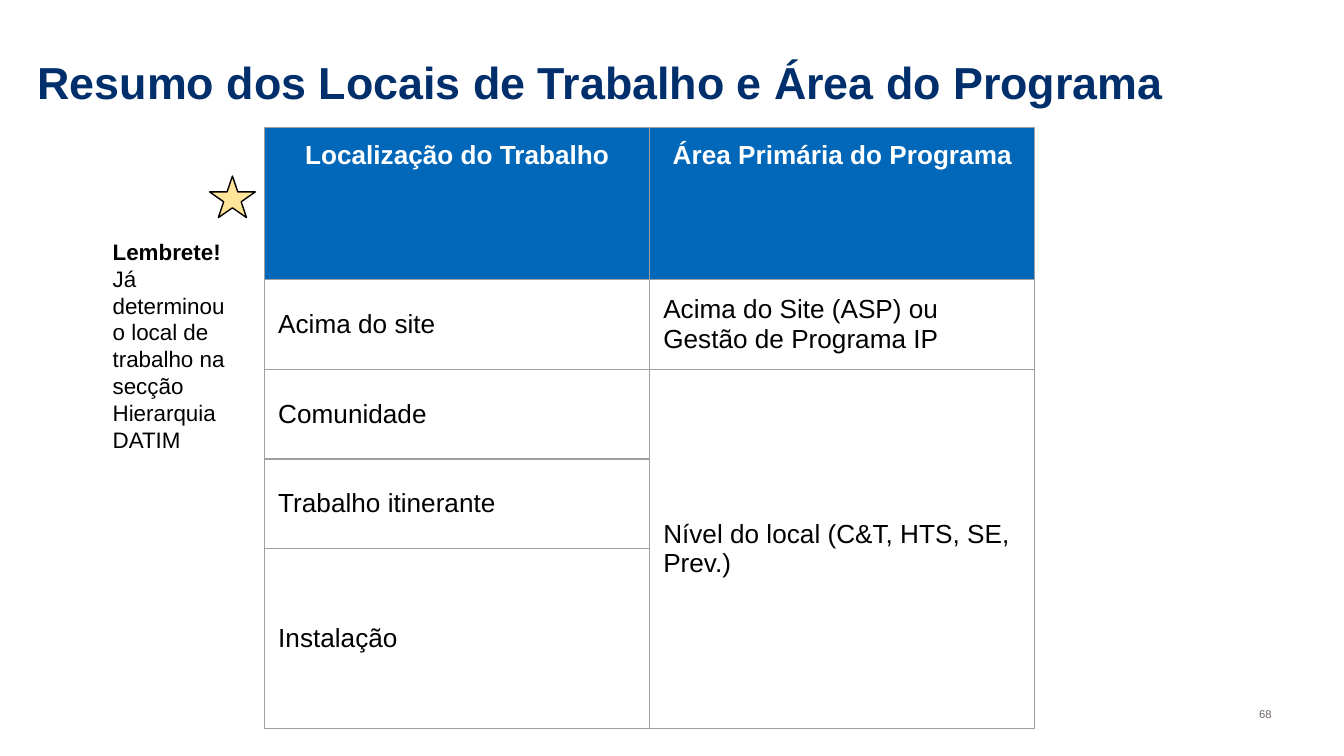
from lxml import etree
from pptx import Presentation
from pptx.dml.color import RGBColor
from pptx.enum.shapes import MSO_SHAPE as Shape
from pptx.enum.text import MSO_ANCHOR as Anchor, MSO_AUTO_SIZE as AutoSize, PP_ALIGN as Align
from pptx.oxml.ns import qn
from pptx.util import Inches, Pt

NAVY, BLUE, GREY, BORDER = "002F6C", "0067B9", "6C6463", "9E9E9E"
BLACK, WHITE, YELLOW = "000000", "FFFFFF", "FFE599"

HEADERS = ["Localização do Trabalho", "Área Primária do Programa"]
LOCATIONS = ["Acima do site", "Comunidade", "Trabalho itinerante", "Instalação"]
ABOVE_SITE = "Acima do Site (ASP) ou Gestão de Programa IP"
SITE_LEVEL = "Nível do local (C&T, HTS, SE, Prev.)"


def color(value):
    return RGBColor.from_string(value)


def add_run(para, text, size, fill, bold=False):
    span = para.add_run()
    span.text = text
    span.font.name = "Arial"
    span.font.size = Pt(size)
    span.font.bold = bold
    span.font.color.rgb = color(fill)


def set_frame(frame, anchor, vertical=0.1):
    frame.word_wrap = True
    frame.auto_size = AutoSize.NONE
    frame.vertical_anchor = anchor
    frame.margin_left = frame.margin_right = Inches(0.1)
    frame.margin_top = frame.margin_bottom = Inches(vertical)


def add_title(page, left, top, width, height):
    title = page.shapes.title
    title.left, title.top = Inches(left), Inches(top)
    title.width, title.height = Inches(width), Inches(height)
    set_frame(title.text_frame, Anchor.BOTTOM)
    para = title.text_frame.paragraphs[0]
    para.alignment = Align.LEFT
    add_run(para, "Resumo dos Locais de Trabalho e Área do Programa", 24, NAVY, True)


def set_borders(cell):
    properties = cell._tc.get_or_add_tcPr()
    for index, side in enumerate(("lnL", "lnR", "lnT", "lnB")):
        line = etree.Element(qn(f"a:{side}"), w=str(Pt(0.75)))
        fill = etree.SubElement(line, qn("a:solidFill"))
        etree.SubElement(fill, qn("a:srgbClr"), val=BORDER)
        properties.insert(index, line)


def fill_cell(cell, text, header=False):
    cell.vertical_anchor = Anchor.TOP if header else Anchor.MIDDLE
    para = cell.text_frame.paragraphs[0]
    para.alignment = Align.CENTER if header else Align.LEFT
    add_run(para, text, 14, WHITE if header else BLACK, header)


def add_locations_table(page, left, top, width, height):
    header_height = 1.13
    row_height = (height - header_height) / 5
    table = page.shapes.add_table(
        6, 2, Inches(left), Inches(top), Inches(width), Inches(height)).table
    table.first_row = table.horz_banding = False
    for row_index, row in enumerate(table.rows):
        row.height = Inches(row_height if row_index else header_height)
        for cell in row.cells:
            cell.margin_left = cell.margin_right = Inches(0.1)
            cell.margin_top = cell.margin_bottom = Inches(0.1)
            if row_index:
                cell.fill.background()
            else:
                cell.fill.solid()
                cell.fill.fore_color.rgb = color(BLUE)
            set_borders(cell)

    table.cell(2, 1).merge(table.cell(5, 1))
    table.cell(4, 0).merge(table.cell(5, 0))
    for column, text in enumerate(HEADERS):
        fill_cell(table.cell(0, column), text, header=True)
    for row_index, text in enumerate(LOCATIONS, start=1):
        fill_cell(table.cell(row_index, 0), text)
    fill_cell(table.cell(1, 1), ABOVE_SITE)
    fill_cell(table.cell(2, 1), SITE_LEVEL)


def add_reminder(page, left, top, width, height):
    """Star at the top right of the box, with the reminder text below it."""
    star_width, star_height, text_offset = 0.34, 0.31, 0.36
    star = page.shapes.add_shape(
        Shape.STAR_5_POINT, Inches(left + width - star_width), Inches(top),
        Inches(star_width), Inches(star_height))
    star.shadow.inherit = False
    star.fill.solid()
    star.fill.fore_color.rgb = color(YELLOW)
    star.line.color.rgb = color(BLACK)
    star.line.width = Pt(0.75)

    box = page.shapes.add_textbox(
        Inches(left), Inches(top + text_offset), Inches(width), Inches(height - text_offset))
    set_frame(box.text_frame, Anchor.TOP)
    para = box.text_frame.paragraphs[0]
    add_run(para, "Lembrete!", 12, BLACK, True)
    para.add_line_break()
    add_run(para, "Já determinou o local de trabalho na secção Hierarquia DATIM", 12, BLACK)


def add_page_number(page, left, top, width, height):
    box = page.shapes.add_textbox(Inches(left), Inches(top), Inches(width), Inches(height))
    set_frame(box.text_frame, Anchor.MIDDLE, vertical=0.05)
    add_run(box.text_frame.paragraphs[0], "68", 6, GREY)


def main():
    deck = Presentation()
    deck.slide_width, deck.slide_height = Inches(10), Inches(10 * 9 / 16)
    page = deck.slides.add_slide(deck.slide_layouts[5])
    add_title(page, 0.18, 0.2, 9.32, 0.71)
    add_locations_table(page, 1.97, 0.95, 5.73, 4.47)
    add_page_number(page, 9.27, 5.1, 0.6, 0.43)
    add_reminder(page, 0.74, 1.31, 1.16, 2.18)
    deck.save("out.pptx")


if __name__ == "__main__":
    main()
